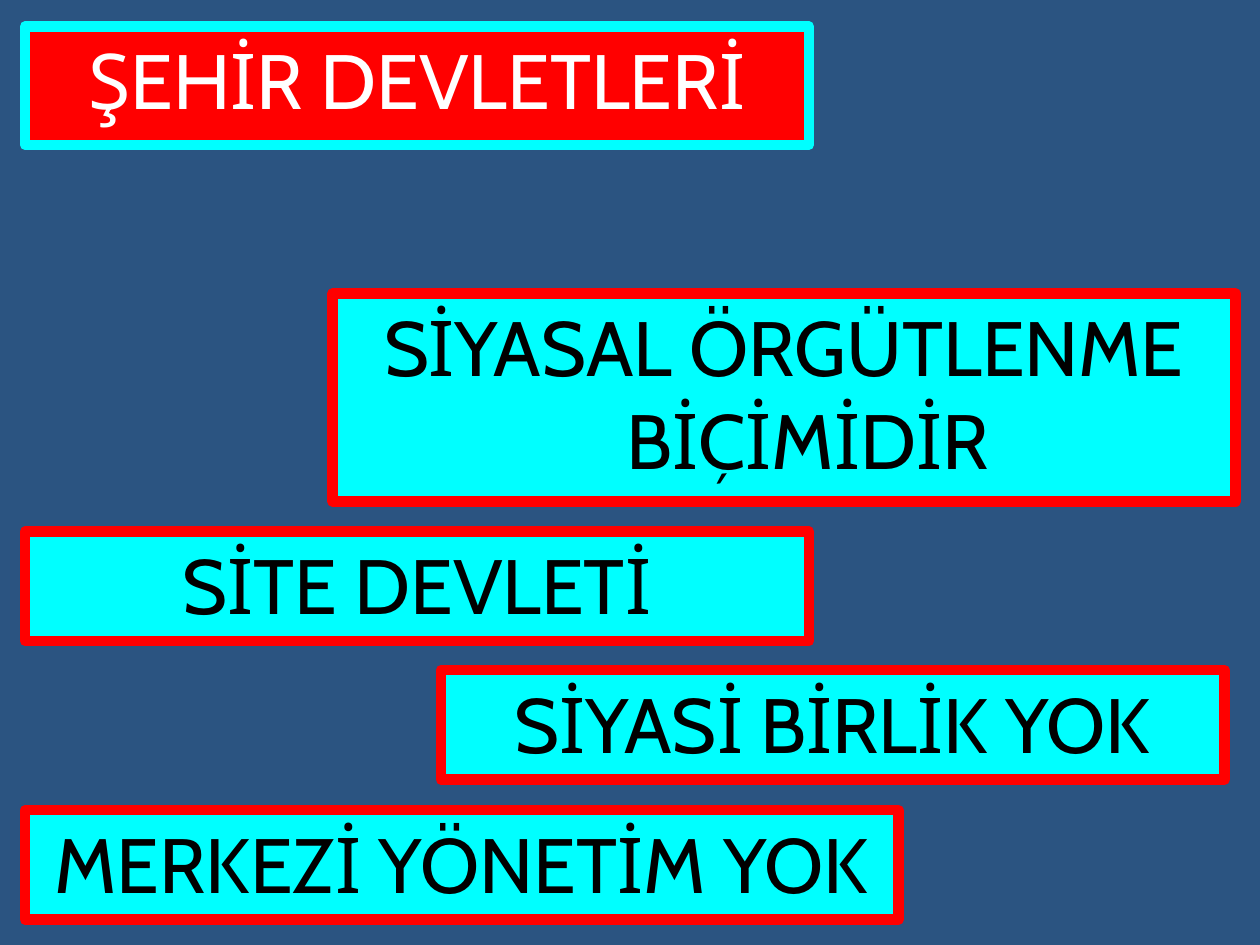
from dataclasses import dataclass

import pptx
import pptx.dml.color
import pptx.enum.shapes
import pptx.enum.text
import pptx.slide
import pptx.util

Pt = pptx.util.Pt
RGBColor = pptx.dml.color.RGBColor

NAVY = RGBColor(0x2B, 0x54, 0x81)
RED = RGBColor(0xFF, 0x00, 0x00)
CYAN = RGBColor(0x00, 0xFF, 0xFF)
WHITE = RGBColor(0xFF, 0xFF, 0xFF)
BLACK = RGBColor(0x00, 0x00, 0x00)

HANGING = Pt(27)
FONT = {"name": "Cabin", "size": Pt(44), "bold": False}
FRAME = {
    "word_wrap": True,
    "vertical_anchor": pptx.enum.text.MSO_ANCHOR.TOP,
    "margin_left": Pt(7.2),
    "margin_right": Pt(7.2),
    "margin_top": Pt(3.6),
    "margin_bottom": Pt(3.6),
}


@dataclass(frozen=True)
class Banner:
    text: str
    left: float
    top: float
    width: float
    height: float = 62.6
    fill: RGBColor = CYAN
    border: RGBColor = RED
    color: RGBColor = BLACK


BANNERS = (
    Banner("ŞEHİR DEVLETLERİ", 14.4, 15.1, 447.8, 67.7, RED, CYAN, WHITE),
    Banner("SİTE DEVLETİ", 14.4, 303.8, 447.8),
    Banner("SİYASİ BİRLİK YOK", 252, 383, 447.8),
    Banner("MERKEZİ YÖNETİM YOK", 14.4, 463, 499),
    Banner("SİYASAL ÖRGÜTLENME BİÇİMİDİR", 190, 167.8, 516.2, 118.8),
)


def apply(target: object, values: dict) -> None:
    for name, value in values.items():
        setattr(target, name, value)


def draw_banner(s: pptx.slide.Slide, banner: Banner) -> None:
    sp = s.shapes.add_shape(
        pptx.enum.shapes.MSO_SHAPE.RECTANGLE,
        Pt(banner.left), Pt(banner.top), Pt(banner.width), Pt(banner.height),
    )
    sp.shadow.inherit = False
    sp.fill.solid()
    sp.fill.fore_color.rgb = banner.fill
    sp.line.color.rgb = banner.border
    sp.line.width = Pt(6)
    tf = sp.text_frame
    apply(tf, FRAME)
    p = tf.paragraphs[0]
    p.alignment = pptx.enum.text.PP_ALIGN.CENTER
    pPr = p._p.get_or_add_pPr()
    pPr.set("marL", str(HANGING))
    pPr.set("indent", str(-HANGING))
    r = p.add_run()
    r.text = banner.text
    apply(r.font, FONT)
    r.font.color.rgb = banner.color


def main() -> None:
    prs = pptx.Presentation()
    prs.slide_width, prs.slide_height = Pt(720), Pt(540)
    s = prs.slides.add_slide(prs.slide_layouts[6])
    s.background.fill.solid()
    s.background.fill.fore_color.rgb = NAVY
    for banner in BANNERS:
        draw_banner(s, banner)
    prs.save("out.pptx")


if __name__ == "__main__":
    main()
